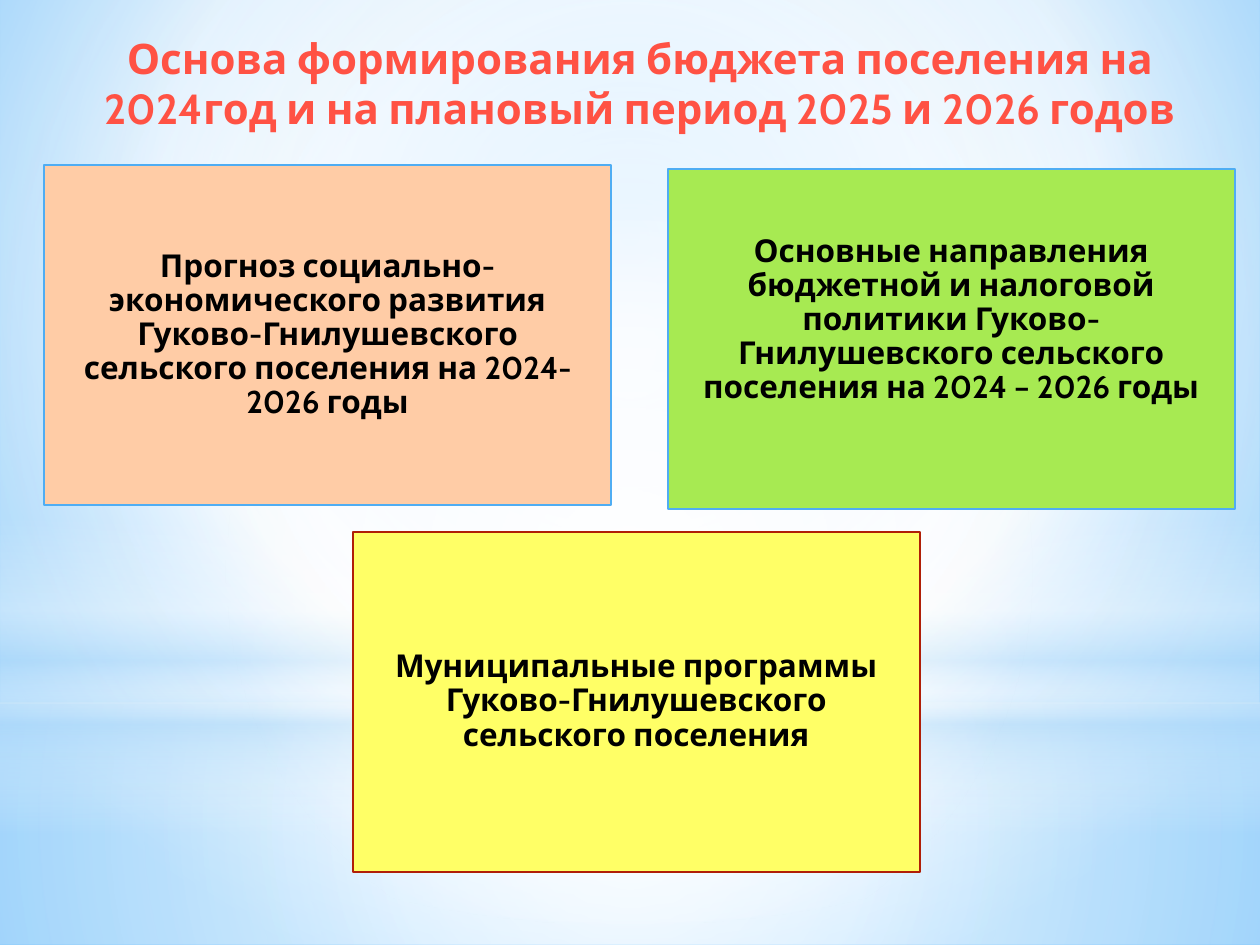
from dataclasses import dataclass

from lxml.etree import SubElement
from pptx import Presentation
from pptx.dml.color import RGBColor
from pptx.enum.shapes import MSO_SHAPE
from pptx.enum.text import MSO_ANCHOR, MSO_AUTO_SIZE, PP_ALIGN
from pptx.oxml.ns import qn
from pptx.util import Inches, Pt


@dataclass(frozen=True)
class Theme:
    """Colours, font and type sizes of the deck."""

    font: str = "Cabin"
    title_size: int = 24
    body_size: int = 18
    line_width: float = 1.25
    title: str = "FF5244"
    text: str = "000000"
    blue: str = "4FADF3"
    red: str = "B01F07"
    peach: str = "FFCCA6"
    green: str = "A7EA52"
    yellow: str = "FFFF66"
    white: str = "FFFFFF"
    haze: str = "B4DCFA"
    sky: str = "9ED5FF"
    deep_sky: str = "5BB9FF"


def write_text(frame, text, *, font, size, color, spacing=1.0, inset=0.1, bottom=0.05):
    """Fill a text frame with one bold, centred paragraph."""
    frame.word_wrap = True
    frame.auto_size = MSO_AUTO_SIZE.NONE
    frame.vertical_anchor = MSO_ANCHOR.MIDDLE
    frame.margin_left = frame.margin_right = Inches(inset)
    frame.margin_top = Inches(min(inset, 0.07))
    frame.margin_bottom = Inches(bottom)
    para = frame.paragraphs[0]
    para.alignment = PP_ALIGN.CENTER
    para.line_spacing = spacing
    span = para.add_run()
    span.text = text
    span.font.name = font
    span.font.size = Pt(size)
    span.font.bold = True
    span.font.color.rgb = RGBColor.from_string(color)


def set_gradient(properties, stops, center=None):
    """Replace a solid fill by a circular gradient, or a vertical one without a center."""
    solid = properties.find(qn("a:solidFill"))
    gradient = properties.makeelement(qn("a:gradFill"), {"rotWithShape": "1"})
    properties.replace(solid, gradient)
    stop_list = SubElement(gradient, qn("a:gsLst"))
    for position, color, opacity in stops:
        stop = SubElement(stop_list, qn("a:gs"), pos=str(position * 1000))
        tint = SubElement(stop, qn("a:srgbClr"), val=color)
        if opacity < 100:
            SubElement(tint, qn("a:alpha"), val=str(opacity * 1000))
    if center:
        path = SubElement(gradient, qn("a:path"), {"path": "circle"})
        edges = {side: str(share * 1000) for side, share in zip("ltrb", center)}
        SubElement(path, qn("a:fillToRect"), edges)
    else:
        SubElement(gradient, qn("a:lin"), ang="5400000", scaled="0")


class SlideBuilder:
    """Holds the theme and the current slide."""

    def __init__(self, slide, theme):
        self.slide = slide
        self.theme = theme

    def background(self, stops, center):
        """Give the slide a gradient background."""
        self.slide.background.fill.solid()
        set_gradient(self.slide.element.find(".//" + qn("p:bgPr")), stops, center)

    def shape(self, kind, left, top, width, height, fill):
        """Add a filled preset shape without a shadow."""
        shape = self.slide.shapes.add_shape(
            kind, Inches(left), Inches(top), Inches(width), Inches(height)
        )
        shape.shadow.inherit = False
        shape.fill.solid()
        shape.fill.fore_color.rgb = RGBColor.from_string(fill)
        return shape

    def glow(self, kind, top, height, stops, center=None):
        """Add a full-width translucent layer."""
        layer = self.shape(kind, 0, top, 10, height, self.theme.white)
        layer.line.fill.background()
        set_gradient(layer.element.spPr, stops, center)

    def title(self, text, left, top, width, height):
        """Place and format the title placeholder in front of the layers."""
        title = self.slide.shapes.title
        title.left, title.top = Inches(left), Inches(top)
        title.width, title.height = Inches(width), Inches(height)
        self.slide.shapes.element.append(title.element)
        write_text(title.text_frame, text, font=self.theme.font,
                   size=self.theme.title_size, color=self.theme.title)

    def card(self, text, left, top, fill, line, bottom=0.07):
        """Add a coloured card with its text."""
        box = self.shape(MSO_SHAPE.RECTANGLE, left, top, 4.5, 2.7, fill)
        box.line.color.rgb = RGBColor.from_string(line)
        box.line.width = Pt(self.theme.line_width)
        write_text(box.text_frame, text, font=self.theme.font, size=self.theme.body_size,
                   color=self.theme.text, spacing=0.9, inset=0.07, bottom=bottom)


def main():
    """Build and save the deck."""
    deck = Presentation()
    deck.slide_width, deck.slide_height = Inches(10), Inches(7.5)
    theme = Theme()
    page = SlideBuilder(deck.slides.add_slide(deck.slide_layouts[5]), theme)
    white, haze = theme.white, theme.haze
    middle = (50, 50, 50, 50)

    page.background(
        [(0, theme.sky, 100), (60, white, 100), (100, theme.deep_sky, 100)], (20, 10, 20, 60)
    )
    page.glow(MSO_SHAPE.RECTANGLE, 5.58, 1.92,
              [(0, white, 91), (37, white, 76), (100, haze, 79)], middle)
    page.glow(MSO_SHAPE.RECTANGLE, 0, 5.58,
              [(0, white, 89), (48, white, 62), (100, haze, 79)], middle)
    page.glow(MSO_SHAPE.RECTANGLE, 4.12, 2.5,
              [(0, white, 0), (29, white, 30), (45, haze, 40),
               (55, white, 26), (65, haze, 60), (100, white, 0)])
    page.glow(MSO_SHAPE.OVAL, 1.75, 5.58, [(0, white, 100), (56, white, 0)], middle)

    page.title(
        "Основа формирования бюджета поселения на 2024год и на плановый период 2025 и 2026 годов",
        0.33, 0.21, 9.5, 0.87,
    )
    page.card(
        "Прогноз социально-экономического развития Гуково-Гнилушевского "
        "сельского поселения на 2024-2026 годы",
        0.35, 1.31, theme.peach, theme.blue,
    )
    page.card(
        "Основные направления бюджетной и налоговой политики Гуково-Гнилушевского "
        "сельского поселения на 2024 – 2026 годы",
        5.3, 1.34, theme.green, theme.blue, bottom=0.37,
    )
    page.card(
        "Муниципальные программы Гуково-Гнилушевского сельского поселения",
        2.8, 4.22, theme.yellow, theme.red,
    )
    deck.save("out.pptx")


if __name__ == "__main__":
    main()
